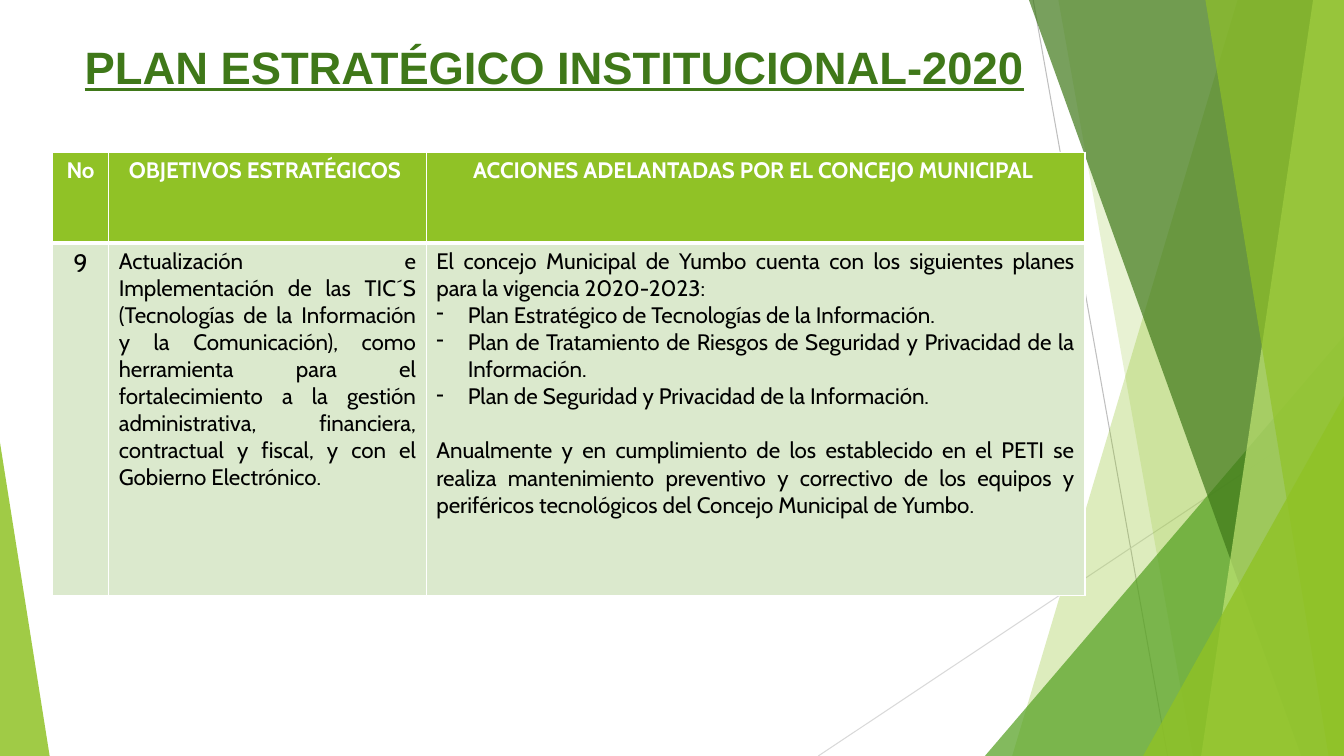
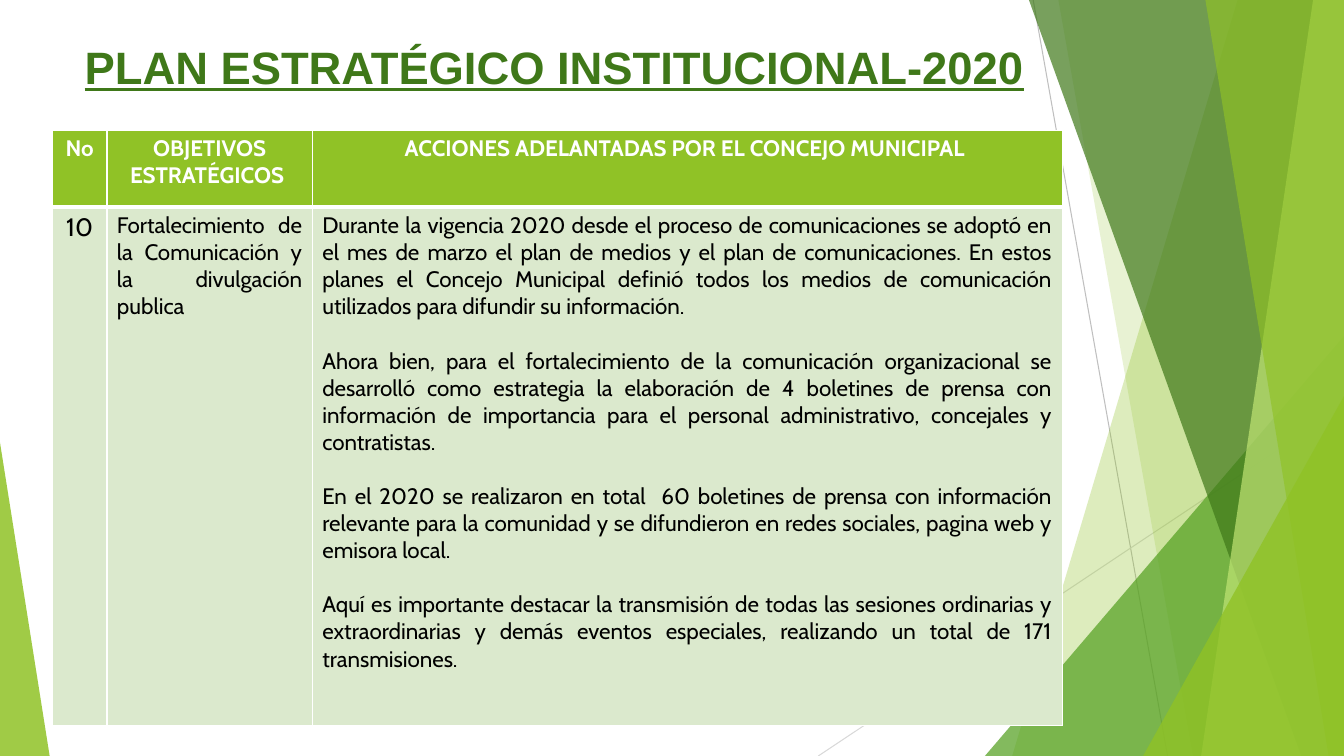
"""Build two slides of the institutional strategic plan."""
from lxml import etree
from pptx import Presentation
from pptx import util as u
from pptx.dml import color
from pptx.enum import shapes, text
from pptx.oxml import ns

COLOURS = {
    "white": "FFFFFF", "black": "000000", "lime": "90C226", "leaf": "54A021",
    "forest": "3F7819", "pale": "C0E474", "mint": "DBE9CD",
    "grey": "BFBFBF", "silver": "D9D9D9",
}
WIDTH, HEIGHT = 960, 540
TITLE = "PLAN ESTRATÉGICO INSTITUCIONAL-2020"
HEADERS = ["No", "OBJETIVOS ESTRATÉGICOS ", "ACCIONES ADELANTADAS POR EL CONCEJO MUNICIPAL "]
PLAIN, BULLET, SPACED = "plain", "bullet", "spaced"


def rgb(name):
    return color.RGBColor.from_string(COLOURS[name])


def add_element(parent, tag, **attributes):
    return etree.SubElement(parent, ns.qn(tag), attributes)


class Deck:
    title_font, body_font = "Arial", "Cabin"
    title_size, number_size, body_size = 32.4, 18, 16
    title_box = (53.3, 24.5, 721, 68)
    table_left, line_gap, bullet_indent = 37.4, 19.4, 22.5

    def __init__(self):
        self.presentation = Presentation()
        self.presentation.slide_width = u.Pt(WIDTH)
        self.presentation.slide_height = u.Pt(HEIGHT)
        self.layout = self.presentation.slide_layouts.get_by_name("Title Only")
        self.slide = None
        self.shared_count = 0

    def add_slide(self, title):
        self.slide = self.presentation.slides.add_slide(self.layout)
        shape = self.slide.shapes.title
        shape.left, shape.top, shape.width, shape.height = map(u.Pt, self.title_box)
        frame = shape.text_frame
        frame.vertical_anchor = text.MSO_ANCHOR.TOP
        frame.auto_size = text.MSO_AUTO_SIZE.NONE
        frame.word_wrap = True
        paragraph = frame.paragraphs[0]
        paragraph.alignment = text.PP_ALIGN.LEFT
        run = self.add_run(paragraph, title, self.title_font, self.title_size, "forest", True)
        run.font.underline = True

    def add_run(self, paragraph, content, font, size, colour, bold=False):
        run = paragraph.add_run()
        run.text = content
        run.font.name, run.font.size, run.font.bold = font, u.Pt(size), bold
        run.font.color.rgb = rgb(colour)
        return run

    def share(self, shape):
        self.shared_count += 1
        shape.element.xpath("./*/p:cNvPr")[0].set("id", str(100 + self.shared_count))
        self.layout.shapes.element.append(shape.element)

    def share_fill(self, shape, colour, opacity):
        shape.shadow.inherit = False
        shape.line.fill.background()
        shape.fill.solid()
        shape.fill.fore_color.rgb = rgb(colour)
        tint = shape.element.xpath("./p:spPr/a:solidFill/a:srgbClr")[0]
        add_element(tint, "a:alpha", val=str(opacity * 1000))
        self.share(shape)

    def share_line(self, start, end, colour):
        connector = self.slide.shapes.add_connector(
            shapes.MSO_CONNECTOR.STRAIGHT, *map(u.Pt, start + end))
        connector.line.color.rgb = rgb(colour)
        connector.line.width = u.Pt(0.75)
        add_element(connector.element.spPr, "a:effectLst")
        self.share(connector)

    def share_band(self, top_x, bottom_x, colour, opacity):
        builder = self.slide.shapes.build_freeform(u.Pt(top_x), 0)
        corners = [(WIDTH, 0), (WIDTH, HEIGHT), (bottom_x, HEIGHT)]
        builder.add_line_segments([(u.Pt(x), u.Pt(y)) for x, y in corners])
        self.share_fill(builder.convert_to_shape(), colour, opacity)

    def share_triangle(self, left, top, right, apex, colour, opacity):
        shape = self.slide.shapes.add_shape(
            shapes.MSO_SHAPE.ISOSCELES_TRIANGLE,
            *map(u.Pt, (left, top, right - left, HEIGHT - top)))
        shape.adjustments[0] = apex
        self.share_fill(shape, colour, opacity)

    def share_backdrop(self):
        self.share_line((738, 0), (834, HEIGHT), "grey")
        self.share_line((WIDTH, 290), (584.5, HEIGHT), "silver")
        self.share_band(884, 723, "lime", 30)
        self.share_band(756, 852, "lime", 20)
        self.share_triangle(703.5, 240, WIDTH, 1, "leaf", 72)
        self.share_band(735, 929.5, "forest", 70)
        self.share_band(938, 858, "pale", 70)
        self.share_band(861, 949, "lime", 65)
        self.share_triangle(816.5, 283, WIDTH, 1, "lime", 80)
        self.share_triangle(0, 316, 35.5, 0, "lime", 85)

    def style_cell(self, cell, fill, top, bottom):
        properties = cell._tc.get_or_add_tcPr()
        for side, width in zip("LRTB", (1, 1, top, bottom)):
            border = add_element(properties, f"a:ln{side}", w=str(u.Pt(width)))
            add_element(add_element(border, "a:solidFill"), "a:srgbClr", val=COLOURS["white"])
        cell.fill.solid()
        cell.fill.fore_color.rgb = rgb(fill)

    def fill_cell(self, cell, paragraphs, alignment, size, colour, bold=False):
        frame = cell.text_frame
        for index, (kind, content) in enumerate(paragraphs):
            paragraph = frame.add_paragraph() if index else frame.paragraphs[0]
            paragraph.alignment = alignment
            if kind == SPACED:
                paragraph.space_before = u.Pt(self.line_gap)
            if kind == BULLET:
                properties = paragraph._p.get_or_add_pPr()
                indent = u.Pt(self.bullet_indent)
                properties.set("marL", str(indent))
                properties.set("indent", str(-indent))
                add_element(properties, "a:buChar", char="-")
            self.add_run(paragraph, content, self.body_font, size, colour, bold)

    def add_table(self, top, columns, rows, number, objective, actions):
        table = self.slide.shapes.add_table(
            len(rows), len(columns),
            *map(u.Pt, (self.table_left, top, sum(columns), sum(rows)))).table
        table.horz_banding = False
        for column, width in zip(table.columns, columns):
            column.width = u.Pt(width)
        for row, height in zip(table.rows, rows):
            row.height = u.Pt(height)
        center, justify = text.PP_ALIGN.CENTER, text.PP_ALIGN.JUSTIFY
        body = [
            ([(PLAIN, number)], center, self.number_size),
            ([(PLAIN, objective)], justify, self.body_size),
            (actions, justify, self.body_size),
        ]
        for index, (header, content) in enumerate(zip(HEADERS, body)):
            header_cell, body_cell = table.cell(0, index), table.cell(1, index)
            self.style_cell(header_cell, "lime", 1, 3)
            self.style_cell(body_cell, "mint", 3, 1)
            self.fill_cell(header_cell, [(PLAIN, header)], center, self.body_size, "white", True)
            self.fill_cell(body_cell, *content, "black")


def main():
    deck = Deck()
    deck.add_slide(TITLE)
    deck.share_backdrop()
    deck.add_table(
        108.7, (40.3, 226.8, 470.5), (64.8, 252), "9",
        "Actualización e Implementación de las TIC´S (Tecnologías de la Información y la "
        "Comunicación), como herramienta para el fortalecimiento a la gestión administrativa, "
        "financiera, contractual y fiscal, y con el Gobierno Electrónico.",
        [
            (PLAIN, "El concejo Municipal de Yumbo cuenta con los siguientes planes para la "
                    "vigencia 2020-2023:"),
            (BULLET, "Plan Estratégico de Tecnologías de la Información. "),
            (BULLET, "Plan de Tratamiento de Riesgos de Seguridad y Privacidad de la Información."),
            (BULLET, "Plan de Seguridad y Privacidad de la Información."),
            (SPACED, "Anualmente y en cumplimiento de los establecido en el PETI se realiza "
                     "mantenimiento preventivo y correctivo de los equipos y periféricos "
                     "tecnológicos del Concejo Municipal de Yumbo."),
        ])
    deck.add_slide(TITLE)
    deck.add_table(
        93, (39, 146.7, 535.7), (55, 370), "10",
        "Fortalecimiento de la Comunicación y la  divulgación publica",
        [
            (PLAIN, "Durante la vigencia 2020 desde el proceso de comunicaciones se adoptó en el "
                    "mes de marzo el plan de medios y el plan de comunicaciones. En estos planes "
                    "el Concejo Municipal definió todos los medios de comunicación utilizados "
                    "para difundir su información. "),
            (SPACED, "Ahora bien, para el fortalecimiento de la comunicación organizacional se "
                     "desarrolló como estrategia la elaboración de 4 boletines de prensa con "
                     "información de importancia para el personal administrativo, concejales y "
                     "contratistas."),
            (SPACED, "En el 2020 se realizaron en total  60 boletines de prensa con información "
                     "relevante para la comunidad y se difundieron en redes sociales, pagina web "
                     "y emisora local."),
            (SPACED, "Aquí es importante destacar la transmisión de todas las sesiones ordinarias "
                     "y extraordinarias y demás eventos especiales, realizando un total de 171 "
                     "transmisiones. "),
        ])
    deck.presentation.save("out.pptx")


if __name__ == "__main__":
    main()
